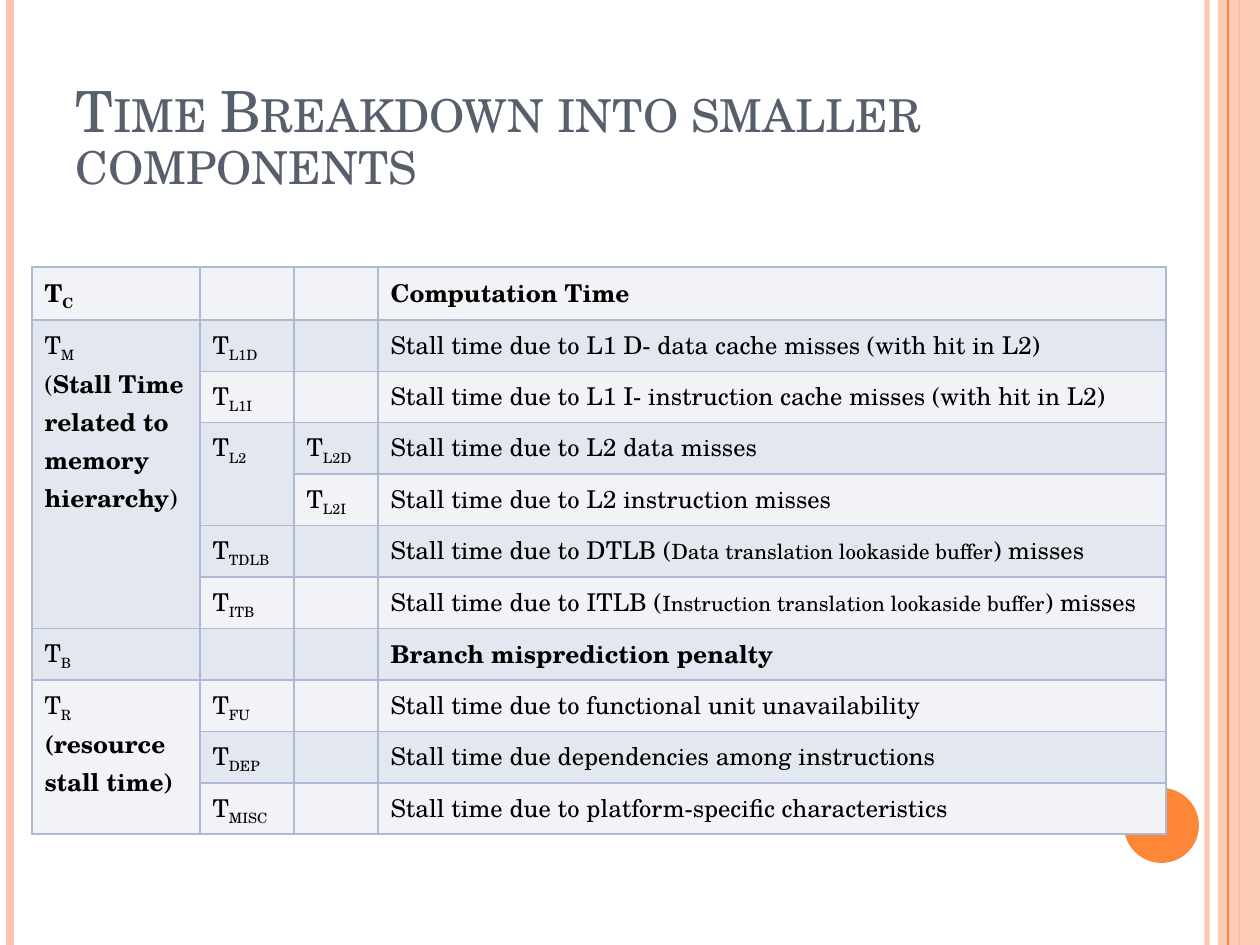
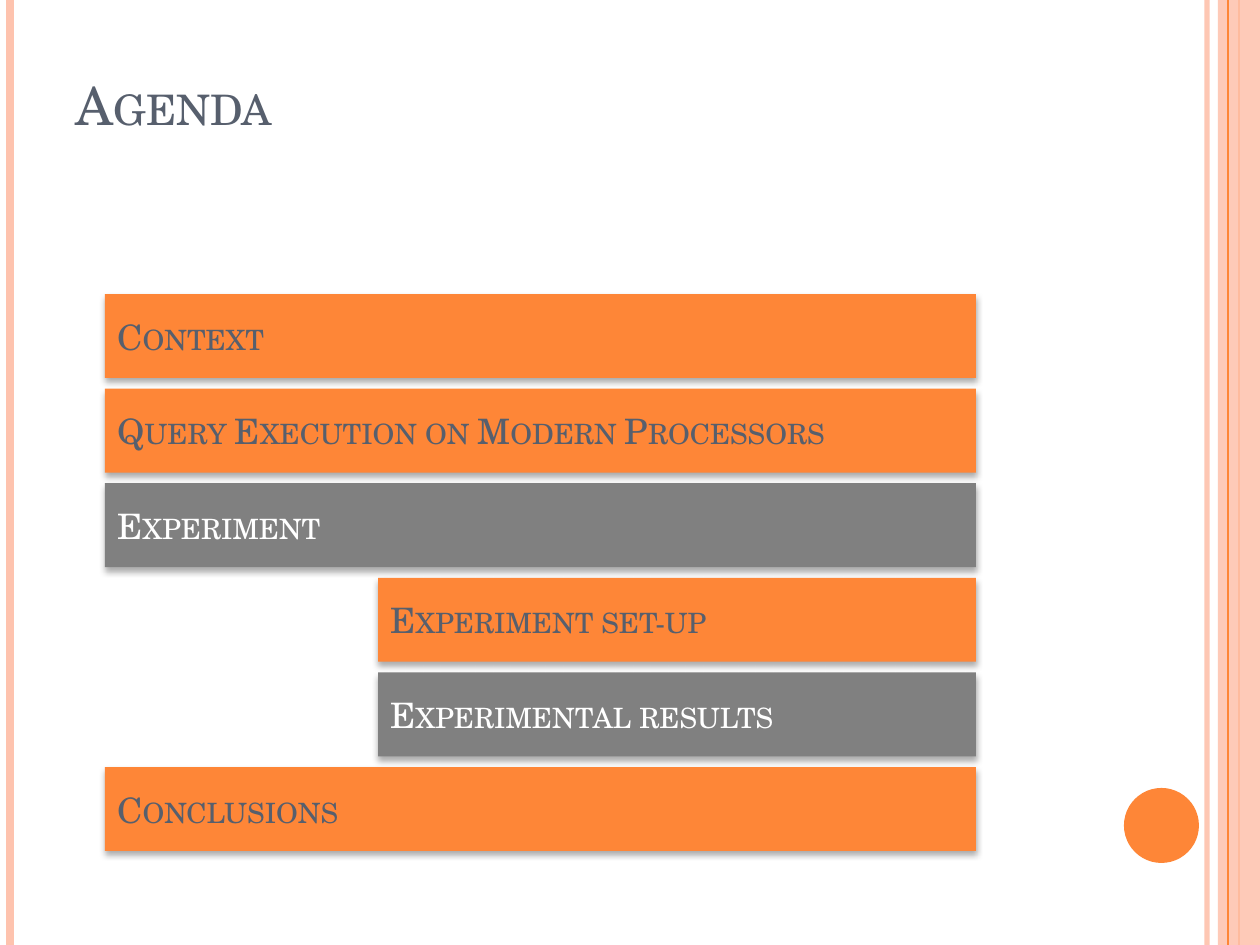
"""Builds two slides: a table of time components and an agenda of bars."""
from pptx import Presentation
from pptx.dml.color import RGBColor
from pptx.enum.shapes import MSO_CONNECTOR, MSO_SHAPE
from pptx.enum.text import MSO_ANCHOR, MSO_AUTO_SIZE, PP_ALIGN
from pptx.oxml import parse_xml
from pptx.oxml.ns import nsdecls, qn
from pptx.oxml.xmlchemy import OxmlElement
from pptx.util import Pt

PX = 914400 / 126
WIDE, HIGH = 1260, 945
FACE = "TeX Gyre Schola"
ORANGE, PINK, SLATE, GREY = "FE8637", "FEC3AE", "575F6D", "808080"
WHITE, BLACK, EDGE = "FFFFFF", "000000", "AEBAD5"
BANDS = ["F2F3F7", "E3E7EF"]

# Marks that open a run: _ subscript, * bold, ~ small; | parts the runs.
ROWS = [
    ("*T|*_C", "", "", "*Computation Time"),
    ("T|_M\n(|*Stall Time related to memory hierarchy|)", "T|_L1D", "",
     "Stall time due to L1 D- data cache misses (with hit in L2)"),
    (None, "T|_L1I", "", "Stall time due to L1 I- instruction cache misses (with hit in L2)"),
    (None, "T|_L2", "T|_L2D", "Stall time due to L2 data misses"),
    (None, None, "T|_L2I", "Stall time due to L2 instruction misses"),
    (None, "T|_TDLB", "",
     "Stall time due to DTLB (|~Data translation lookaside buffer|) misses"),
    (None, "T|_ITB", "",
     "Stall time due to ITLB (|~Instruction translation lookaside buffer|) misses"),
    ("T|_B", "", "", "*Branch misprediction penalty"),
    ("T|_R\n*(resource stall time)", "T|_FU", "",
     "Stall time due to functional unit unavailability"),
    (None, "T|_DEP", "", "Stall time due dependencies among instructions"),
    (None, "T|_MISC", "", "Stall time due to platform-specific characteristics"),
]
COLS = [168, 94, 84, 788]
GRID = {"left": 32, "top": 267, "high": 566}

AGENDA = [
    ("Context", 105, ORANGE, SLATE),
    ("Query Execution on Modern Processors", 105, ORANGE, SLATE),
    ("Experiment", 105, GREY, WHITE),
    ("Experiment set-up", 378, ORANGE, SLATE),
    ("Experimental results", 378, GREY, WHITE),
    ("Conclusions", 105, ORANGE, SLATE),
]
BARS = {"top": 294, "end": 851, "right": 976, "high": 84}


def px(*vals):
    """Turn px into EMU."""
    return [round(val * PX) for val in vals]


def rgb(code):
    """Turn a hex string into a colour."""
    return RGBColor.from_string(code)


def style(item, **form):
    """Set each format value on an item."""
    for key, val in form.items():
        setattr(item, key, val)


def write(para, text, size, ink, bold=False, **extra):
    """Add one run with its font and raw run attributes."""
    run = para.add_run()
    run.text = text
    style(run.font, name=FACE, size=Pt(size), bold=bold)
    run.font.color.rgb = rgb(ink)
    for key, val in extra.items():
        run.font._element.set(key, val)


def fade(item, part):
    """Set the opacity of the colour in a shape, in percent."""
    tint = item.element.spPr.find(".//" + qn("a:srgbClr"))
    alpha = OxmlElement("a:alpha")
    alpha.set("val", str(part * 1000))
    tint.append(alpha)


def shape(slide, kind, box, color):
    """Add a plain filled shape."""
    item = slide.shapes.add_shape(kind, *px(*box))
    item.shadow.inherit = False
    item.fill.solid()
    item.fill.fore_color.rgb = rgb(color)
    item.line.fill.background()
    return item


def rule(slide, x, color, width):
    """Add a line down the full slide."""
    item = slide.shapes.add_connector(MSO_CONNECTOR.STRAIGHT, *px(x, 0, x, HIGH))
    item.line.color.rgb = rgb(color)
    item.line.width = Pt(width)
    item.element.spPr.append(OxmlElement("a:effectLst"))
    return item


def frame(deck, slide):
    """Draw the shared bands and move them to the master."""
    edge = rule(slide, 1207, PINK, 3)
    fade(edge, 93)
    left = rule(slide, 10, PINK, 4.5)
    inner = rule(slide, 1239, ORANGE, 1.5)
    band = shape(slide, MSO_SHAPE.RECTANGLE, (1218, 0, 42, HIGH), PINK)
    fade(band, 87)
    thin = rule(slide, 1228, ORANGE, 0.75)
    disc = shape(slide, MSO_SHAPE.OVAL, (1124, 788, 75, 75), ORANGE)
    tree = deck.slide_master.shapes.element
    for spot, item in enumerate([edge, left, inner, band, thin, disc]):
        item.element.find(".//" + qn("p:cNvPr")).set("id", str(100 + spot))
        tree.insert(2 + spot, item.element)


def head(slide, text, size, foot):
    """Fill the title, leaving foot px below it."""
    title = slide.shapes.title
    left, top, width, high = px(63, 38, 1029, 157)
    style(title, left=left, top=top, width=width, height=high)
    style(title.text_frame, word_wrap=True, auto_size=MSO_AUTO_SIZE.NONE,
          vertical_anchor=MSO_ANCHOR.BOTTOM, margin_bottom=px(foot)[0])
    para = title.text_frame.paragraphs[0]
    style(para, alignment=PP_ALIGN.LEFT, line_spacing=0.76)
    write(para, text, size, SLATE, cap="small")


def fill(cell, text, color):
    """Border, colour and write one cell."""
    props = cell._tc.get_or_add_tcPr()
    for side in "LRTB":
        props.append(parse_xml(
            f'<a:ln{side} {nsdecls("a")} w="12700"><a:solidFill>'
            f'<a:srgbClr val="{EDGE}"/></a:solidFill></a:ln{side}>'))
    cell.fill.solid()
    cell.fill.fore_color.rgb = rgb(color)
    for spot, line in enumerate((text or "").split("\n")):
        body = cell.text_frame
        para = body.add_paragraph() if spot else body.paragraphs[0]
        for piece in line.split("|"):
            word = piece.lstrip("_*~")
            marks = piece[:len(piece) - len(word)]
            extra = {"baseline": "-25000"} if "_" in marks else {}
            write(para, word, 12 if "~" in marks else 14, BLACK, "*" in marks, **extra)


def times(slide):
    """Build the table, merging each cell with the None cells below it."""
    count = len(ROWS)
    box = px(GRID["left"], GRID["top"], sum(COLS), GRID["high"])
    table = slide.shapes.add_table(count, len(COLS), *box).table
    style(table, first_row=False, horz_banding=False)
    for col, width in zip(table.columns, COLS):
        col.width = px(width)[0]
    for row in table.rows:
        row.height = px(GRID["high"] / count)[0]
    for y, row in enumerate(ROWS):
        for x, text in enumerate(row):
            fill(table.cell(y, x), text, BANDS[y % 2])
    for x in range(len(COLS)):
        starts = [y for y in range(count) if ROWS[y][x] is not None]
        for top, end in zip(starts, starts[1:] + [count]):
            if end - top > 1:
                table.cell(top, x).merge(table.cell(end - 1, x))


def bars(slide):
    """Stack the agenda bars at equal steps."""
    high = BARS["high"]
    step = (BARS["end"] - BARS["top"] - high) / (len(AGENDA) - 1)
    for spot, (text, left, color, ink) in enumerate(AGENDA):
        box = (left, BARS["top"] + spot * step, BARS["right"] - left, high)
        bar = shape(slide, MSO_SHAPE.RECTANGLE, box, color)
        bar.element.spPr.find(qn("a:effectLst")).append(parse_xml(
            f'<a:outerShdw {nsdecls("a")} blurRad="44450" dist="27940" dir="5400000" '
            f'rotWithShape="0"><a:srgbClr val="{BLACK}"><a:alpha val="32000"/>'
            '</a:srgbClr></a:outerShdw>'))
        style(bar.text_frame, word_wrap=True, vertical_anchor=MSO_ANCHOR.MIDDLE)
        para = bar.text_frame.paragraphs[0]
        para.alignment = PP_ALIGN.LEFT
        write(para, text, 20, ink, cap="small")


def main():
    """Build and save the deck."""
    deck = Presentation()
    deck.slide_width, deck.slide_height = px(WIDE, HIGH)
    plain = deck.slide_layouts[5]
    first, second = [deck.slides.add_slide(plain) for _ in range(2)]
    frame(deck, first)
    head(first, "Time Breakdown into smaller components", 32.4, 0)
    times(first)
    head(second, "Agenda", 30, 60)
    bars(second)
    deck.save("out.pptx")


if __name__ == "__main__":
    main()
